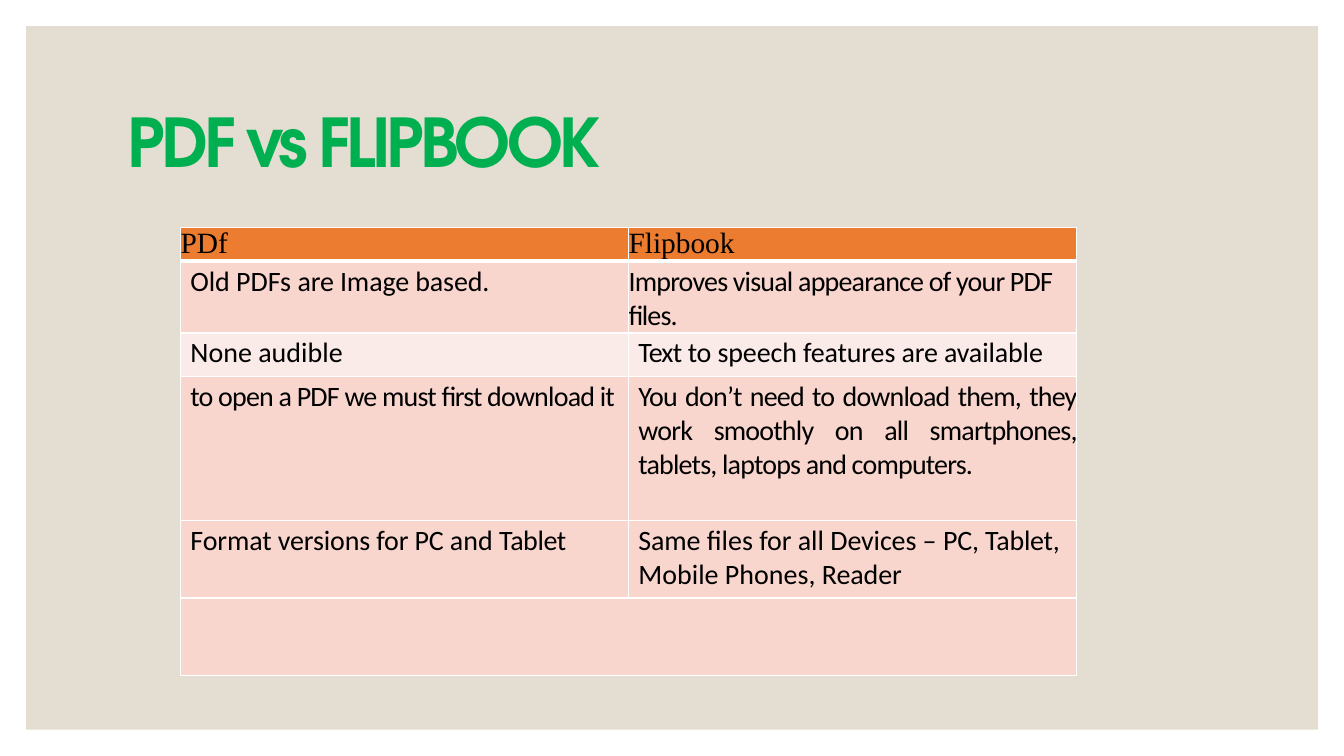
from lxml.etree import SubElement
from pptx import Presentation
from pptx.dml.color import RGBColor
from pptx.enum.shapes import MSO_SHAPE
from pptx.enum.text import MSO_ANCHOR, MSO_AUTO_SIZE, PP_ALIGN
from pptx.oxml import parse_xml
from pptx.oxml.ns import nsdecls, qn
from pptx.util import Cm, Pt

COLORS = {
    "panel": "E3DED1",
    "title": "00B050",
    "header": "EC7C30",
    "band": "F8D6CD",
    "light": "FBEBE8",
    "line": "FFFFFF",
    "text": "000000",
}
HEADINGS = ["PDf", "Flipbook"]
FEATURES = [
    [
        [("Old ", -0.1), ("PDFs ", 0), ("are Image based.", -0.1)],
        [("Improves visual appearance of your PDF files.", -0.6)],
    ],
    [
        [("None audible", 0)],
        [("Text ", -0.6), ("to speech features are available", -0.1)],
    ],
    [
        [("to open a PDF we must first download it", -0.6)],
        [("You don’t need to download them, they work smoothly on all "
          "smartphones, tablets, laptops and computers.", -0.6)],
    ],
    [
        [("Format versions for PC ", -0.1), ("and ", 0), ("Tablet", -0.3)],
        [("Same ", -0.1), ("files ", 0), ("for ", -0.1), ("all ", 0),
         ("Devices ", -0.1), ("– ", 0), ("PC, ", -0.1), ("Tablet, ", -0.2),
         ("Mobile Phones,", 0), (" Reader", -0.1)],
    ],
]
ROW_HEIGHTS = [0.84, 1.8, 1.09, 3.63, 1.96, 1.96]
UNINDENTED = (1, 1)
JUSTIFIED = (3, 1)


def rgb(name):
    return RGBColor.from_string(COLORS[name])


def add_run(p, text, font, size, color, spacing=0):
    r = p.add_run()
    r.text = text
    r.font.name = font
    r.font.size = Pt(size)
    r.font.bold = False
    r.font.color.rgb = rgb(color)
    r.font._element.set("spc", str(round(spacing * 100)))
    return r


def add_panel(s, left, top, width, height):
    sp = s.shapes.add_shape(MSO_SHAPE.RECTANGLE, left, top, width, height)
    sp.shadow.inherit = False
    sp.fill.solid()
    sp.fill.fore_color.rgb = rgb("panel")
    sp.line.fill.background()
    sp.element.getparent().insert(2, sp.element)


def add_title(s, left, top, width, height):
    title = s.shapes.title
    title.left, title.top, title.width, title.height = left, top, width, height
    tf = title.text_frame
    tf.word_wrap = True
    tf.auto_size = MSO_AUTO_SIZE.NONE
    tf.vertical_anchor = MSO_ANCHOR.MIDDLE
    p = tf.paragraphs[0]
    p.alignment = PP_ALIGN.LEFT
    p.line_spacing = 0.9
    r = add_run(p, "PDF vs FLIPBOOK", "TeX Gyre Adventor", 48, "title", -3)
    r.font.bold = True


def format_cell(cell, row):
    cell.fill.solid()
    fill = "header" if row == 0 else "light" if row == 2 else "band"
    cell.fill.fore_color.rgb = rgb(fill)
    cell.margin_left = cell.margin_right = cell.margin_bottom = 0
    cell.margin_top = Cm(0.08) if row else 0
    tcPr = cell._tc.get_or_add_tcPr()
    thick = {0: "lnB", 1: "lnT"}.get(row)
    if row == 1:
        thick = "lnT"
    for i, side in enumerate(["lnL", "lnR", "lnT", "lnB"]):
        width = Pt(3 if side == thick else 1)
        ln = parse_xml(f'<a:{side} {nsdecls("a")} w="{width}"/>')
        solid = SubElement(ln, qn("a:solidFill"))
        SubElement(solid, qn("a:srgbClr")).set("val", COLORS["line"])
        tcPr.insert(i, ln)


def fill_feature(cell, parts, position):
    p = cell.text_frame.paragraphs[0]
    p.alignment = PP_ALIGN.JUSTIFY if position == JUSTIFIED else PP_ALIGN.LEFT
    if position != UNINDENTED:
        p.space_before = Pt(2.4)
        pPr = p._p.get_or_add_pPr()
        pPr.set("marL", str(Cm(0.25)))
        pPr.set("indent", "0")
    for text, spacing in parts:
        add_run(p, text, "Calibri", 20, "text", spacing)


def add_comparison(s, left, top, width):
    rows, cols = len(ROW_HEIGHTS), len(HEADINGS)
    frame = s.shapes.add_table(rows, cols, left, top, width, Cm(sum(ROW_HEIGHTS)))
    table = frame.table
    for column in table.columns:
        column.width = width // cols
    for row, height in enumerate(ROW_HEIGHTS):
        table.rows[row].height = Cm(height)
        for col in range(cols):
            format_cell(table.cell(row, col), row)
    for col, heading in enumerate(HEADINGS):
        p = table.cell(0, col).text_frame.paragraphs[0]
        add_run(p, heading, "Times New Roman", 21, "text")
    for row, features in enumerate(FEATURES, 1):
        for col, parts in enumerate(features):
            fill_feature(table.cell(row, col), parts, (row, col))
    table.cell(rows - 1, 0).merge(table.cell(rows - 1, cols - 1))


def main():
    prs = Presentation()
    prs.slide_width, prs.slide_height = Cm(33.87), Cm(19.05)
    s = prs.slides.add_slide(prs.slide_layouts[5])
    add_panel(s, Cm(0.66), Cm(0.66), Cm(32.56), Cm(17.73))
    add_title(s, Cm(2.97), Cm(1.78), Cm(27.94), Cm(3.81))
    add_comparison(s, Cm(4.55), Cm(5.74), Cm(22.58))
    prs.save("out.pptx")


if __name__ == "__main__":
    main()
